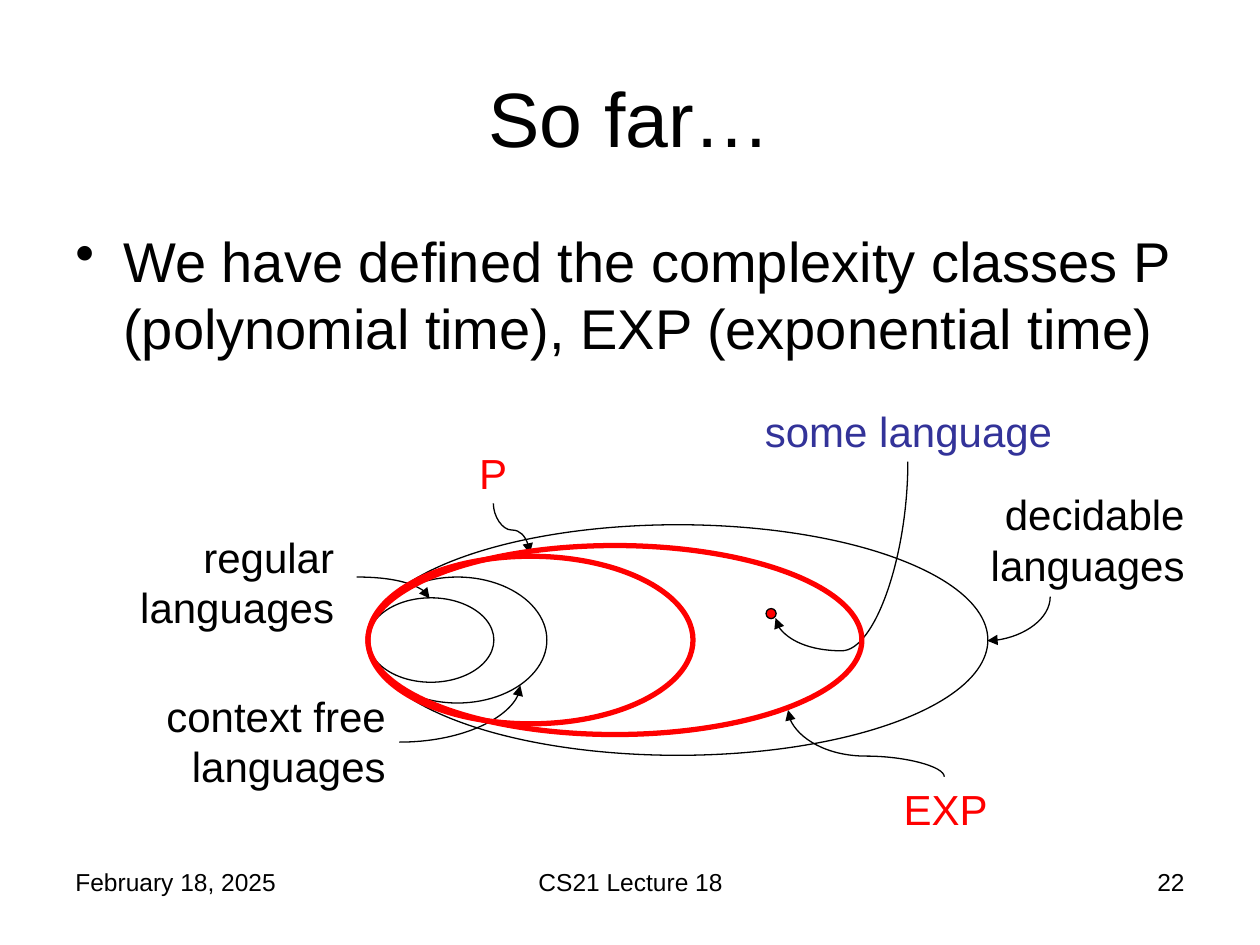
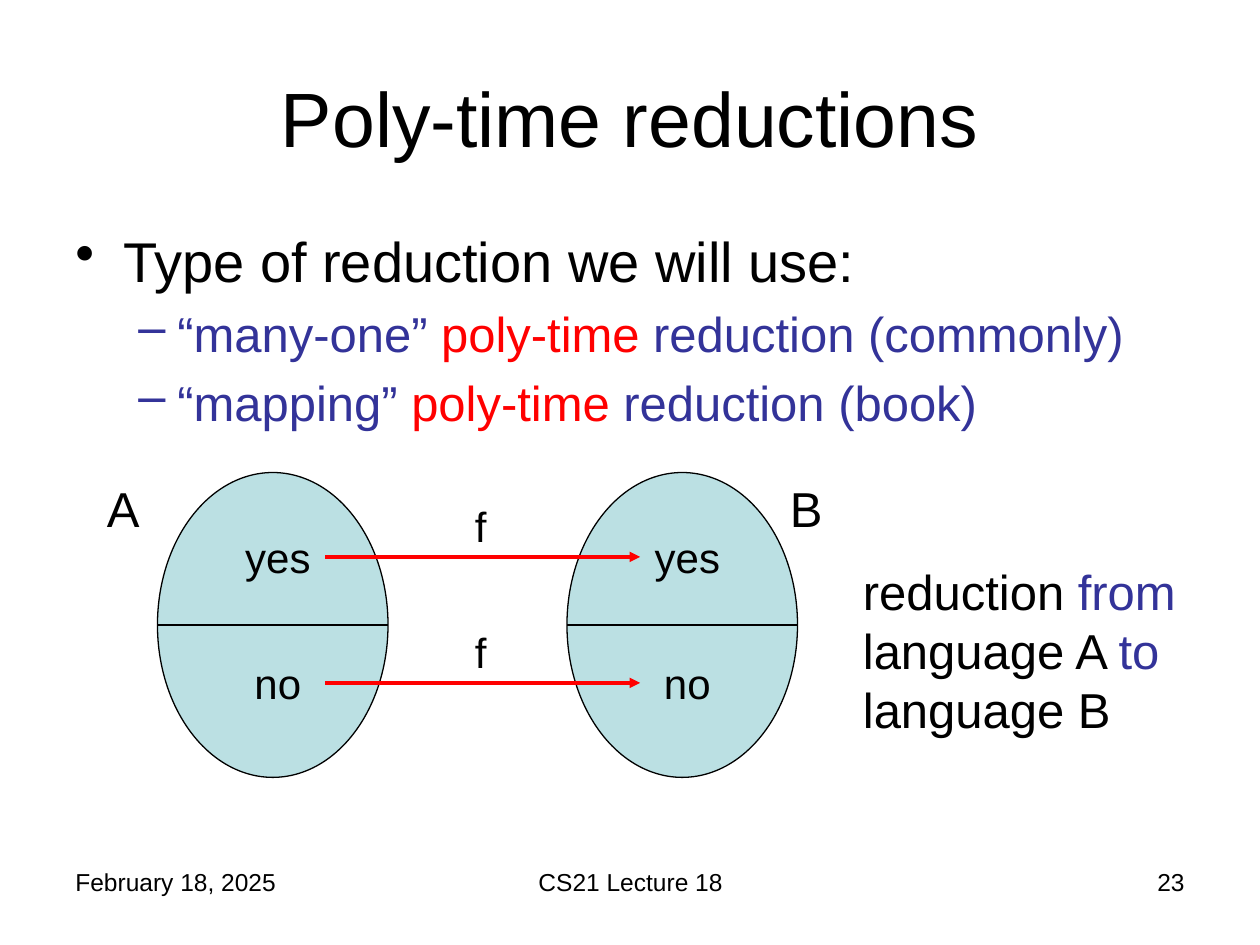
"""Build two lecture slides on complexity classes and reductions."""
from typing import NamedTuple

from pptx import Presentation
from pptx.dml.color import RGBColor
from pptx.enum.shapes import MSO_CONNECTOR, MSO_SHAPE
from pptx.enum.text import MSO_ANCHOR, PP_ALIGN
from pptx.oxml import parse_xml
from pptx.oxml.ns import nsdecls, qn
from pptx.util import Inches, Pt

LEFT, MID, RIGHT = PP_ALIGN.LEFT, PP_ALIGN.CENTER, PP_ALIGN.RIGHT
MIDDLE = MSO_ANCHOR.MIDDLE
OVAL = MSO_SHAPE.OVAL
LINE, CURVE = MSO_CONNECTOR.STRAIGHT, MSO_CONNECTOR.CURVE

FONT = "Arial"
BLACK, RED, BLUE, PALE = "000000", "FF0000", "333399", "BBE0E3"
THIN, BOLD, THICK = 0.75, 2, 3
DATE, COURSE = "February 18, 2025", "CS21 Lecture 18"


class Run(NamedTuple):
    """A stretch of text in one colour."""
    text: str
    color: str = BLACK


class Para(NamedTuple):
    """A paragraph, with its space before in percent."""
    runs: list
    size: float = 24
    align: PP_ALIGN = LEFT
    gap: int = 50
    bullet: str = ""
    margin: float = 0
    hang: float = 0


class Box(NamedTuple):
    """A place on the slide in inches."""
    left: float
    top: float
    width: float
    height: float


class Label(NamedTuple):
    """A text of one paragraph and its place."""
    box: Box
    para: Para


class Ring(NamedTuple):
    """An ellipse that shares the left edge of the nest."""
    width: float
    height: float
    color: str = BLACK
    weight: float = THIN


class Arc(NamedTuple):
    """A curved arrow: frame, turn, flip, bend count and bend place."""
    box: Box
    turn: int = 0
    flip: str = ""
    geom: int = 2
    bend: float = 0


NEST_X, NEST_Y = 2.92, 5.08
CLASSES = [Ring(4.92, 1.83), Ring(1.42, 1), Ring(1, 0.67)]
TIMED = [Ring(3.92, 1.5, RED, THICK), Ring(2.58, 1.33, RED, THICK)]
DOT = Box(6.08, 4.83, 0.08, 0.08)

ARCS = [
    Arc(Box(2.83, 4.58, 0.58, 0.17)),
    Arc(Box(3.17, 5.44, 0.96, 0.45), flip="v"),
    Arc(Box(7.91, 4.66, 0.35, 0.5), 90),
    Arc(Box(3.86, 4.05, 0.4, 0.29), 270, "h", 3, 0.53),
    Arc(Box(6.06, 3.76, 1.24, 1.05), 90, "", 3, 1.21),
    Arc(Box(6.61, 5.28, 0.53, 1.24), 90, "h", 3, 0.31),
]


def note(box: Box, text: str, color: str = BLACK, size: float = 24,
         align: PP_ALIGN = MID) -> Label:
    """Describe a label in one colour."""
    return Label(box, Para([Run(text, color)], size, align))


NAMES = [
    note(Box(0.92, 4.17, 1.83, 0.9), "regular languages", align=RIGHT),
    note(Box(0.83, 5.43, 2.33, 0.9), "context free languages", align=RIGHT),
    note(Box(7.17, 3.83, 2.33, 0.9), "decidable languages", align=RIGHT),
    note(Box(3.5, 3.5, 0.83, 0.5), "P", RED),
    note(Box(5.75, 3.17, 2.92, 0.5), "some language", BLUE),
    note(Box(6.92, 6.17, 1.17, 0.5), "EXP", RED),
]

SETS = [1.25, 4.5]
SET_TOP, SET_W, SET_H = 3.75, 1.83, 2.42
ROWS = [("yes", 4.17), ("no", 5.17)]
SIDES = [
    note(Box(0.75, 3.75, 0.58, 0.57), "A", size=28, align=LEFT),
    note(Box(6.17, 3.75, 0.58, 0.57), "B", size=28, align=LEFT),
    Label(Box(6.75, 4.41, 2.75, 1.5), Para([
        Run("reduction "), Run("from", BLUE), Run(" language A "),
        Run("to", BLUE), Run(" language B")], 28)),
]


def paint(value: str) -> RGBColor:
    """Turn a hex string into a colour."""
    return RGBColor.from_string(value)


def add_runs(para, runs: list, size: float) -> None:
    """Add styled runs to a paragraph."""
    for item in runs:
        run = para.add_run()
        run.text = item.text
        run.font.name = FONT
        run.font.size = Pt(size)
        run.font.color.rgb = paint(item.color)


def add_text(slide, box: Box, paras: list) -> None:
    """Add a text box that holds the paragraphs."""
    frame = slide.shapes.add_textbox(*map(Inches, box)).text_frame
    frame.word_wrap = True
    for i, item in enumerate(paras):
        para = frame.add_paragraph() if i else frame.paragraphs[0]
        para.alignment = item.align
        props = para._p.get_or_add_pPr()
        if item.gap:
            props.append(parse_xml(
                f'<a:spcBef {nsdecls("a")}>'
                f'<a:spcPct val="{item.gap * 1000}"/></a:spcBef>'))
        if item.bullet:
            props.set("marL", str(Inches(item.margin)))
            props.set("indent", str(Inches(-item.hang)))
            props.append(parse_xml(
                f'<a:buChar {nsdecls("a")} char="{item.bullet}"/>'))
        add_runs(para, item.runs, item.size)


def add_notes(slide, labels: list) -> None:
    """Add each label as a text box."""
    for item in labels:
        add_text(slide, item.box, [item.para])


def add_oval(slide, box: Box, fill: str = "", color: str = BLACK,
             weight: float = THIN) -> None:
    """Add an ellipse, hollow unless a fill is given."""
    oval = slide.shapes.add_shape(OVAL, *map(Inches, box))
    oval.shadow.inherit = False
    if fill:
        oval.fill.solid()
        oval.fill.fore_color.rgb = paint(fill)
    else:
        oval.fill.background()
    oval.line.color.rgb = paint(color)
    oval.line.width = Pt(weight)


def add_rings(slide, rings: list) -> None:
    """Add ellipses that touch at the left of the nest."""
    for ring in rings:
        box = Box(NEST_X, NEST_Y - ring.height / 2, ring.width, ring.height)
        add_oval(slide, box, "", ring.color, ring.weight)


def add_link(slide, kind: MSO_CONNECTOR, ends: tuple, color: str = BLACK,
             weight: float = THIN, arrow: bool = True):
    """Add a connector and return its shape properties."""
    link = slide.shapes.add_connector(kind, *map(Inches, ends))
    link.line.color.rgb = paint(color)
    link.line.width = Pt(weight)
    props = link.element.spPr
    if arrow:
        props.find(qn("a:ln")).append(
            parse_xml(f'<a:tailEnd {nsdecls("a")} type="triangle"/>'))
    props.append(parse_xml(f'<a:effectLst {nsdecls("a")}/>'))
    return props


def add_arc(slide, arc: Arc) -> None:
    """Add a curved arrow in its turned frame."""
    left, top, width, height = arc.box
    xs, ys = (left, left + width), (top, top + height)
    if arc.flip == "h":
        xs = xs[::-1]
    if arc.flip == "v":
        ys = ys[::-1]
    props = add_link(slide, CURVE, (xs[0], ys[0], xs[1], ys[1]))
    if arc.turn:
        props.find(qn("a:xfrm")).set("rot", str(arc.turn * 60000))
    geom = props.find(qn("a:prstGeom"))
    geom.set("prst", f"curvedConnector{arc.geom}")
    if arc.bend:
        geom.find(qn("a:avLst")).append(parse_xml(
            f'<a:gd {nsdecls("a")} name="adj1" '
            f'fmla="val {round(arc.bend * 100000)}"/>'))


def add_page(deck, title: str, number: int, body: list):
    """Add a slide with its title, bullets and footer."""
    slide = deck.slides.add_slide(deck.slide_layouts[5])
    head = slide.shapes.title
    head.left, head.top, head.width, head.height = map(
        Inches, (0.5, 0.3, 9, 1.25))
    head.text_frame.vertical_anchor = MIDDLE
    para = head.text_frame.paragraphs[0]
    para.alignment = MID
    add_runs(para, [Run(title)], 44)
    feet = [(0.5, 2.33, DATE, LEFT), (3.42, 3.17, COURSE, MID),
            (7.17, 2.33, str(number), RIGHT)]
    for left, width, text, align in feet:
        add_text(slide, Box(left, 6.83, width, 0.52),
                 [Para([Run(text)], 14, align, 0)])
    add_text(slide, Box(0.5, 1.75, 9, 1.9), body)
    return slide


def point(text: str) -> Para:
    """Describe a main bullet."""
    return Para([Run(text)], 32, LEFT, 20, "•", 0.38, 0.38)


def dash(start: str, end: str) -> Para:
    """Describe a lower bullet about poly-time."""
    runs = [Run(start, BLUE), Run("poly-time ", RED), Run(end, BLUE)]
    return Para(runs, 28, LEFT, 20, "–", 0.81, 0.31)


def add_nest(deck) -> None:
    """Add the slide of nested language classes."""
    slide = add_page(deck, "So far…", 22, [point(
        "We have defined the complexity classes P "
        "(polynomial time), EXP (exponential time)")])
    add_rings(slide, CLASSES)
    add_notes(slide, NAMES)
    for arc in ARCS:
        add_arc(slide, arc)
    add_oval(slide, DOT, RED)
    add_rings(slide, TIMED)


def add_map(deck) -> None:
    """Add the slide that maps language A to language B."""
    slide = add_page(deck, "Poly-time reductions", 23, [
        point("Type of reduction we will use:"),
        dash("“many-one” ", "reduction (commonly)"),
        dash("“mapping” ", "reduction (book)")])
    half = SET_TOP + SET_H / 2
    for left in SETS:
        add_oval(slide, Box(left, SET_TOP, SET_W, SET_H), PALE)
        add_link(slide, LINE, (left, half, left + SET_W, half), arrow=False)
        add_notes(slide, [note(Box(left + 0.58, top, 0.75, 0.5), word)
                          for word, top in ROWS])
    for _, top in ROWS:
        level = top + 0.25
        add_link(slide, LINE, (2.58, level, 5.08, level), RED, BOLD)
        add_notes(slide, [
            note(Box(3.67, top - 0.25, 0.58, 0.5), "f", align=LEFT)])
    add_notes(slide, SIDES)


def main() -> None:
    """Build and save the deck."""
    deck = Presentation()
    deck.slide_width, deck.slide_height = Inches(10), Inches(7.5)
    add_nest(deck)
    add_map(deck)
    deck.save("out.pptx")


if __name__ == "__main__":
    main()
